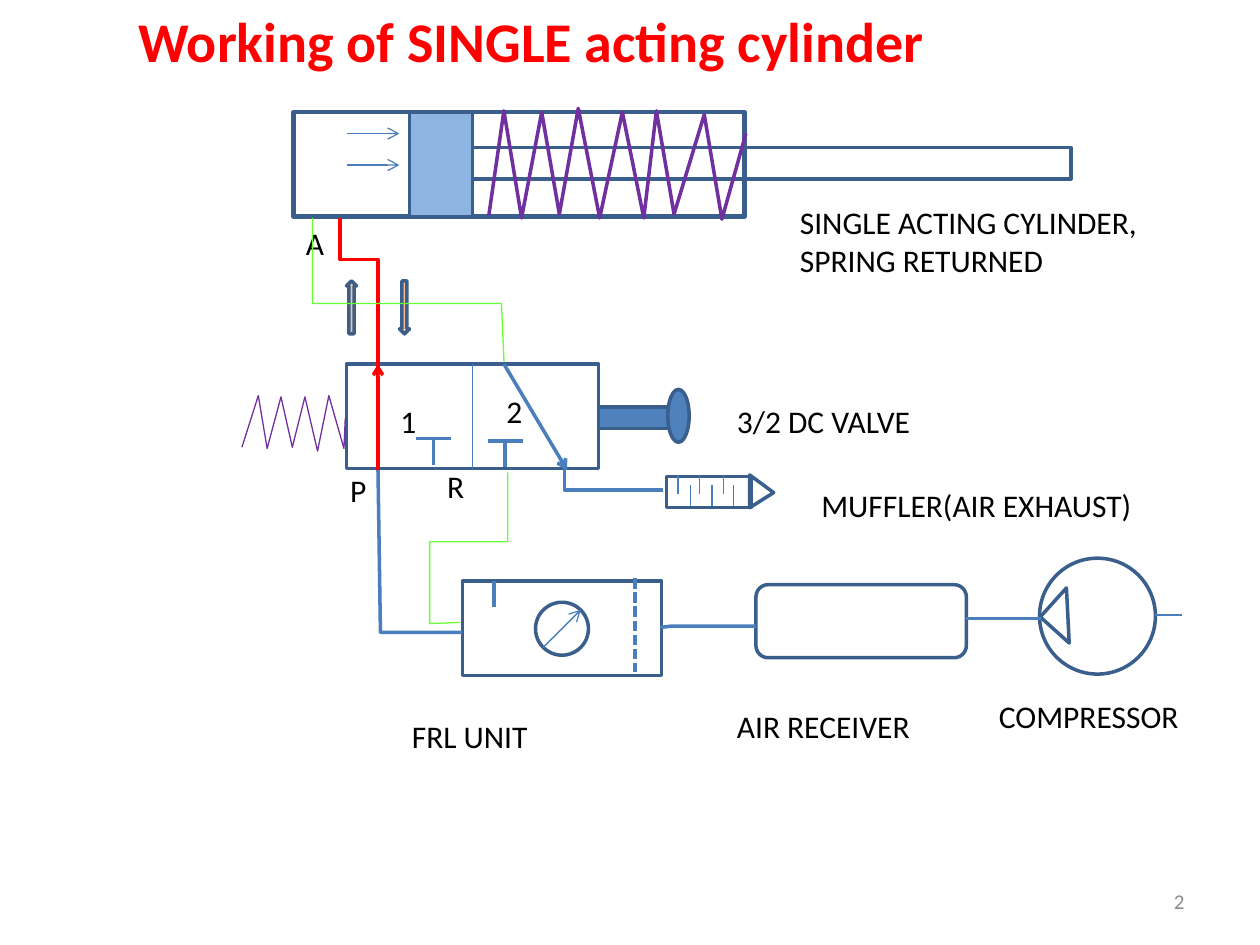
"""Build a pneumatic circuit slide for a single acting cylinder."""
from lxml import etree
from pptx import Presentation
from pptx.dml.color import RGBColor
from pptx.enum.dml import MSO_LINE
from pptx.enum.shapes import MSO_CONNECTOR, MSO_SHAPE
from pptx.enum.text import MSO_ANCHOR, MSO_AUTO_SIZE, PP_ALIGN
from pptx.oxml.ns import qn
from pptx.util import Cm, Pt

RECT, ROUND, OVAL = MSO_SHAPE.RECTANGLE, MSO_SHAPE.ROUNDED_RECTANGLE, MSO_SHAPE.OVAL
UP, DOWN, TRIANGLE = MSO_SHAPE.UP_ARROW, MSO_SHAPE.DOWN_ARROW, MSO_SHAPE.RIGHT_TRIANGLE
STRAIGHT, DASH = MSO_CONNECTOR.STRAIGHT, MSO_LINE.SQUARE_DOT
LEFT, RIGHT = PP_ALIGN.LEFT, PP_ALIGN.RIGHT
TOP, MIDDLE = MSO_ANCHOR.TOP, MSO_ANCHOR.MIDDLE
FIT = MSO_AUTO_SIZE.SHAPE_TO_FIT_TEXT
FONT = "Calibri"
CM_PER_UNIT = 2.54
THIN, THICK = 0.75, 2

COLORS = {
    "outline": "3A5F8C", "line": "4B7EBC", "plunger": "4F81BD", "piston": "8EB4E3",
    "flow": "FAC090", "spring": "7030A0", "supply": "FF0000", "exhaust": "66FF33",
    "text": "000000", "number": "8C8C8C", "white": "FFFFFF",
}

SHAPES = {
    "cylinder": (RECT, (2.33, 0.89, 3.58, 0.83), "white", 2.5),
    "piston": (RECT, (3.25, 0.89, 0.5, 0.83), "piston", THICK),
    "rod": (RECT, (3.75, 1.17, 4.75, 0.25), None, THICK),
    "valve": (RECT, (2.75, 2.89, 2, 0.83), None, THICK),
    "plunger": (RECT, (4.75, 3.23, 0.58, 0.17), "plunger", THICK),
    "button": (OVAL, (5.3, 3.09, 0.17, 0.42), "plunger", THICK),
    "flow up": (UP, (2.75, 2.23, 0.08, 0.42), "flow", THICK),
    "flow down": (DOWN, (3.17, 2.23, 0.08, 0.42), "flow", THICK),
    "muffler": (RECT, (5.29, 3.78, 0.67, 0.25), None, THICK),
    "FRL unit": (RECT, (3.67, 4.61, 1.58, 0.75), None, THICK),
    "gauge": (OVAL, (4.25, 4.78, 0.42, 0.42), None, THICK),
    "receiver": (ROUND, (6, 4.64, 1.67, 0.58), None, THICK),
    "compressor": (OVAL, (8.25, 4.43, 0.92, 0.92), None, THICK),
    "compressor mark": (TRIANGLE, (8.32, 4.73, 0.31, 0.31), None, THICK),
}

PATHS = {
    "cylinder spring": (
        "spring", THICK, False,
        [(3.88, 1.71), (4, 0.88), (4.14, 1.73), (4.3, 0.89), (4.44, 1.7), (4.59, 0.86),
         (4.76, 1.73), (4.94, 0.89), (5.11, 1.73), (5.21, 0.88), (5.35, 1.7), (5.59, 0.91),
         (5.73, 1.74), (5.92, 1.06)]),
    "valve spring": (
        "spring", THIN, False,
        [(1.92, 3.55), (2.05, 3.14), (2.12, 3.56), (2.23, 3.15), (2.32, 3.55), (2.42, 3.15),
         (2.52, 3.58), (2.61, 3.14), (2.73, 3.56), (2.74, 3.32)]),
    "port A pipe": ("supply", THICK, False, [(2.7, 1.73), (2.7, 2.06), (3, 2.06), (3, 2.91)]),
    "muffler pipe": ("line", THICK, False, [(4.48, 3.71), (4.48, 3.89), (5.26, 3.89)]),
    "muffler tip": ("outline", THICK, True, [(5.95, 4.03), (5.95, 3.77), (6.14, 3.91)]),
    "port P pipe": ("line", THICK, False, [(3, 3.71), (3.02, 5.02), (3.67, 5.02)]),
    "receiver pipe": ("line", THICK, False, [(5.24, 4.98), (5.32, 4.97), (6, 4.97)]),
    "return pipe": (
        "exhaust", THIN, False, [(2.48, 1.73), (2.48, 2.41), (3.98, 2.41), (4, 2.87)]),
    "return supply": (
        "exhaust", THIN, False,
        [(3.65, 4.94), (3.41, 4.95), (3.41, 4.3), (4.03, 4.3), (4.03, 3.75)]),
}

ARROWS = [
    ((3, 3.73), (3, 2.89), "supply", THICK),
    ((4, 2.89), (4.5, 3.73), "line", THICK),
    ((4.31, 5.14), (4.61, 4.84), "line", THIN),
] + [((2.75, y), (3.17, y), "line", THIN) for y in (1.06, 1.31)]

BLOCKED_PORTS = [(3.44, 3.48), (4.01, 3.5)]
MUFFLER_TICKS = [((5.38, 5.55, 5.74), 3.77, 3.92), ((5.48, 5.65, 5.82), 3.85, 4.02)]
LINES = [
    ((3.92, 4.61), (3.92, 4.82), THICK),
    ((7.67, 4.91), (8.26, 4.91), THICK),
    ((9.17, 4.88), (9.38, 4.88), THIN),
]
FILTER = ((5.04, 4.59), (5.04, 5.33))
DIVIDER = ((3.75, 2.89), (3.75, 3.72))

TITLE = ("Working of SINGLE acting cylinder", (1, 0, 8.33, 0.64))
LABELS = [
    ("A", (2.33, 1.73, 0.42, 0.4)),
    ("P", (2.68, 3.69, 0.33, 0.4)),
    ("R", (3.45, 3.66, 0.25, 0.4)),
    ("1", (3.08, 3.14, 0.25, 0.4)),
    ("2", (3.92, 3.06, 0.5, 0.42)),
    ("3/2 DC VALVE", (5.75, 3.14, 3.58, 0.4)),
    ("SINGLE ACTING CYLINDER, SPRING RETURNED", (6.25, 1.56, 3.17, 0.71)),
    ("MUFFLER(AIR EXHAUST)", (6.42, 3.81, 3, 0.4)),
    ("FRL UNIT", (3.17, 5.64, 2.08, 0.4)),
    ("AIR RECEIVER", (5.75, 5.56, 1.92, 0.4)),
    ("COMPRESSOR", (7.83, 5.48, 1.75, 0.4)),
]
NUMBER = ("2", (7.17, 6.95, 2.33, 0.4))


def lengths(values):
    return [Cm(v * CM_PER_UNIT) for v in values]


def color(name):
    return RGBColor.from_string(COLORS[name])


def style(s, fill, line, width):
    s.shadow.inherit = False
    if fill:
        s.fill.solid()
        s.fill.fore_color.rgb = color(fill)
    else:
        s.fill.background()
    s.line.color.rgb = color(line)
    s.line.width = Pt(width)


def add_shape(slide, kind, box, fill, width):
    s = slide.shapes.add_shape(kind, *lengths(box))
    style(s, fill, "outline", width)
    return s


def add_path(slide, line, width, closed, points):
    start, *rest = [lengths(point) for point in points]
    builder = slide.shapes.build_freeform(*start, scale=1.0)
    builder.add_line_segments(rest, close=closed)
    style(builder.convert_to_shape(), None, line, width)


def add_line(slide, start, end, line="line", width=THICK, arrow=False):
    s = slide.shapes.add_connector(STRAIGHT, *lengths(start + end))
    s.line.color.rgb = color(line)
    s.line.width = Pt(width)
    if arrow:
        etree.SubElement(s.line._get_or_add_ln(), qn("a:tailEnd"), type="arrow")
    etree.SubElement(s._element.spPr, qn("a:effectLst"))
    return s


def add_text(slide, text, box, size=18, fill="text", bold=False, align=LEFT, anchor=TOP):
    tf = slide.shapes.add_textbox(*lengths(box)).text_frame
    tf.word_wrap = True
    tf.auto_size = FIT
    tf.vertical_anchor = anchor
    p = tf.paragraphs[0]
    p.text = text
    p.alignment = align
    p.font.name, p.font.size, p.font.bold = FONT, Pt(size), bold
    p.font.color.rgb = color(fill)


def main():
    prs = Presentation()
    prs.slide_width, prs.slide_height = lengths((10, 7.5))
    slide = prs.slides.add_slide(prs.slide_layouts[6])

    shapes = {name: add_shape(slide, *spec) for name, spec in SHAPES.items()}
    shapes["compressor mark"].rotation = 42.1

    add_text(slide, *TITLE, size=32, fill="supply", bold=True)
    for label in LABELS:
        add_text(slide, *label)
    add_text(slide, *NUMBER, size=12, fill="number", align=RIGHT, anchor=MIDDLE)

    for path_spec in PATHS.values():
        add_path(slide, *path_spec)
    divider = add_line(slide, *DIVIDER, width=THIN)
    divider.begin_connect(shapes["valve"], 0)
    divider.end_connect(shapes["valve"], 2)
    add_line(slide, *FILTER).line.dash_style = DASH
    for start, end, width in LINES:
        add_line(slide, start, end, width=width)
    for x, y in BLOCKED_PORTS:
        add_line(slide, (x - 0.14, y), (x + 0.14, y))
        add_line(slide, (x, y), (x, y + 0.21))
    for xs, top, bottom in MUFFLER_TICKS:
        for x in xs:
            add_line(slide, (x, top), (x, bottom), width=THIN)
    for arrow in ARROWS:
        add_line(slide, *arrow, arrow=True)
    prs.save("out.pptx")


if __name__ == "__main__":
    main()
